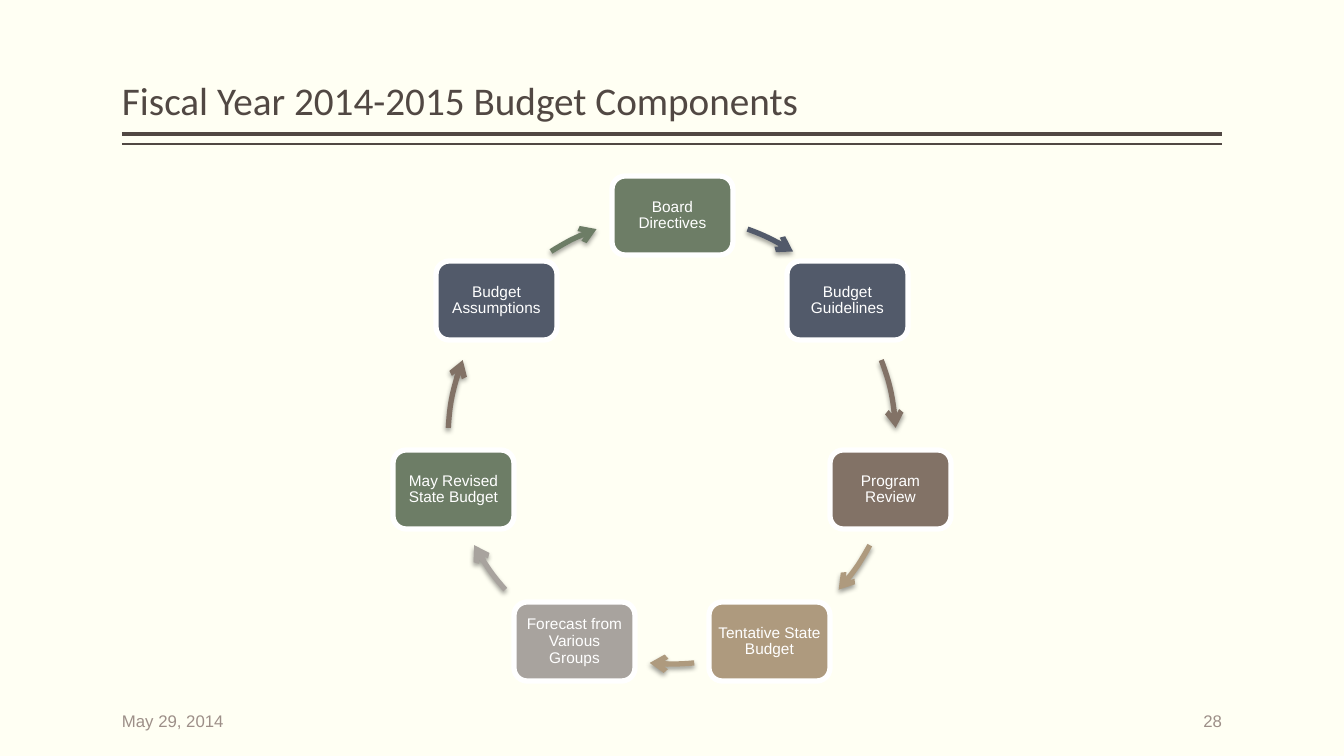
"""Build the slide of the budget components cycle."""
import math

import pptx
import pptx.dml.color
import pptx.enum.shapes
import pptx.enum.text
import pptx.oxml
import pptx.oxml.ns
import pptx.util

RGBColor = pptx.dml.color.RGBColor
Shape = pptx.enum.shapes.MSO_SHAPE
Anchor = pptx.enum.text.MSO_ANCHOR
Align = pptx.enum.text.PP_ALIGN

CREAM = RGBColor(0xFF, 0xFF, 0xF3)
DARK = RGBColor(0x51, 0x48, 0x43)
MUTED = RGBColor(0x9D, 0x8F, 0x88)
WHITE = RGBColor(0xFF, 0xFF, 0xFF)
GREEN = RGBColor(0x6D, 0x7D, 0x66)
BLUE = RGBColor(0x52, 0x5A, 0x6A)
BROWN = RGBColor(0x82, 0x72, 0x66)
TAN = RGBColor(0xAE, 0x9A, 0x7E)
GREY = RGBColor(0xA8, 0xA3, 0x9E)

NAMESPACE = pptx.oxml.ns.nsdecls("a")
ARROWHEAD = f'<a:tailEnd {NAMESPACE} type="arrow"/>'
NO_EFFECT = f"<a:effectLst {NAMESPACE}/>"
SHADOW = (
    f'<a:effectLst {NAMESPACE}><a:outerShdw blurRad="44450" dist="25400" dir="5400000" rotWithShape="0">'
    '<a:srgbClr val="000000"><a:alpha val="38000"/></a:srgbClr></a:outerShdw></a:effectLst>'
)


def px(*lengths):
    return [round(length * 914400 / 100.8) for length in lengths]


def write(box, text, font, size, color, align, anchor, side_inset):
    frame = box.text_frame
    frame.word_wrap = True
    frame.vertical_anchor = anchor
    frame.margin_left, frame.margin_right = px(side_inset, side_inset)
    frame.margin_top, frame.margin_bottom = px(5, 5)
    para = frame.paragraphs[0]
    para.text = text
    para.alignment = align
    para.font.name = font
    para.font.size = pptx.util.Pt(size)
    para.font.color.rgb = color
    return para


deck = pptx.Presentation()
deck.slide_width, deck.slide_height = px(1344, 756)
page = deck.slides.add_slide(deck.slide_layouts[6])
page.background.fill.solid()
page.background.fill.fore_color.rgb = CREAM

for rule_y, weight in [(134, 3), (144, 1)]:
    rule = page.shapes.add_connector(
        pptx.enum.shapes.MSO_CONNECTOR.STRAIGHT, *px(122, rule_y, 1222, rule_y))
    rule.line.color.rgb = DARK
    rule.line.width = pptx.util.Pt(weight)
    rule._element.spPr.append(pptx.oxml.parse_xml(NO_EFFECT))

title = page.shapes.add_textbox(*px(122, 8, 1100, 121))
title_para = write(title, "Fiscal Year 2014-2015 Budget Components", "Calibri", 28, DARK,
                   Align.LEFT, Anchor.BOTTOM, 0)
title_para.line_spacing = 0.9

CENTER_X, CENTER_Y, RADIUS = 672, 440, 224
NODE_WIDTH, NODE_HEIGHT = 121, 79
steps = [
    ("Board Directives", GREEN, BLUE, -70.3, -57.3),
    ("Budget Guidelines", BLUE, BROWN, -20.9, -3.1),
    ("Program Review", BROWN, TAN, 28, 41.9),
    ("Tentative State Budget", TAN, TAN, 84.3, 95.7),
    ("Forecast from Various Groups", GREY, GREY, 138.1, 152),
    ("May Revised State Budget", GREEN, BROWN, 183.1, 200.9),
    ("Budget Assumptions", BLUE, GREEN, 237.3, 250.3),
]
for index, (label, fill, arrow_color, start, end) in enumerate(steps):
    turn = 2 * math.pi * index / len(steps)
    left = round(CENTER_X + RADIUS * math.sin(turn) - NODE_WIDTH / 2)
    top = round(CENTER_Y - RADIUS * math.cos(turn) - NODE_HEIGHT / 2)
    node = page.shapes.add_shape(
        Shape.ROUNDED_RECTANGLE, *px(left, top, NODE_WIDTH, NODE_HEIGHT))
    node.shadow.inherit = False
    node.fill.solid()
    node.fill.fore_color.rgb = fill
    node.line.color.rgb = WHITE
    node.line.width = pptx.util.Pt(3.78)
    node_para = write(node, label, "Arial", 11, WHITE, Align.CENTER, Anchor.MIDDLE, 5)
    node_para.line_spacing = 0.9

    arrow = page.shapes.add_shape(
        Shape.ARC, *px(CENTER_X - RADIUS, CENTER_Y - RADIUS, 2 * RADIUS, 2 * RADIUS))
    arrow.adjustments[0] = start % 360 * 0.6
    arrow.adjustments[1] = end % 360 * 0.6
    arrow.fill.background()
    arrow.line.color.rgb = arrow_color
    arrow.line.width = pptx.util.Pt(3.78)
    arrow.line._get_or_add_ln().append(pptx.oxml.parse_xml(ARROWHEAD))
    arrow._element.spPr.append(pptx.oxml.parse_xml(SHADOW))

for text, left, align in [("28", 1020, Align.RIGHT), ("May 29, 2014", 122, Align.LEFT)]:
    footer = page.shapes.add_textbox(*px(left, 701, 202, 40))
    write(footer, text, "Arial", 12, MUTED, align, Anchor.MIDDLE, 0)

deck.save("out.pptx")
